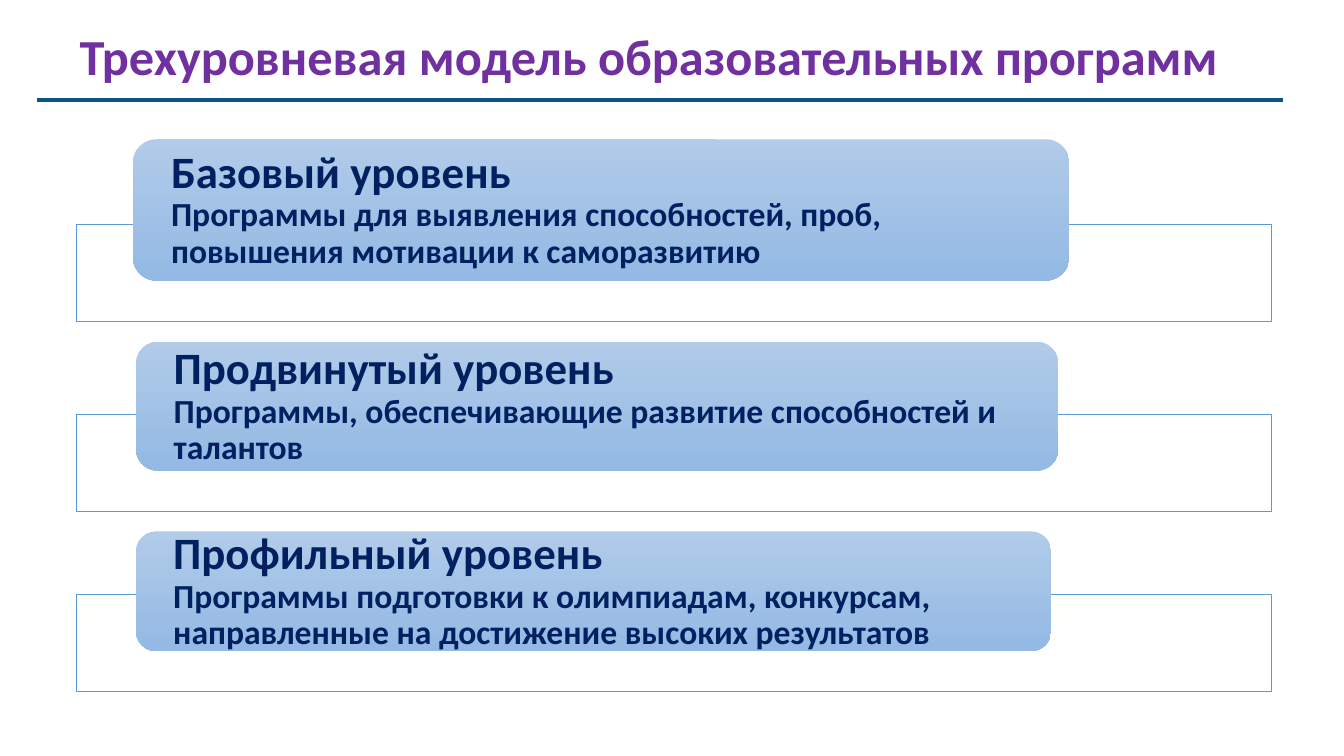
from dataclasses import dataclass

from lxml import etree
from pptx import Presentation
from pptx.dml.color import RGBColor
from pptx.enum.shapes import MSO_CONNECTOR, MSO_SHAPE
from pptx.enum.text import MSO_ANCHOR, PP_ALIGN
from pptx.oxml.ns import qn
from pptx.slide import Slide
from pptx.util import Cm, Pt

RECTANGLE, ROUNDED = MSO_SHAPE.RECTANGLE, MSO_SHAPE.ROUNDED_RECTANGLE
STRAIGHT = MSO_CONNECTOR.STRAIGHT
MIDDLE = MSO_ANCHOR.MIDDLE
LEFT, CENTER = PP_ALIGN.LEFT, PP_ALIGN.CENTER

FONT = "Calibri"
COLORS = {
    "heading": "7030A0",
    "rule": "095586",
    "frame_fill": "FFFFFF",
    "frame_line": "5B9BD5",
    "card_top": "B1CBE9",
    "card_bottom": "93B9E4",
    "card_text": "002060",
}

# Frames share one column; each ends a fixed drop below its card
FRAME_LEFT, FRAME_WIDTH, FRAME_HEIGHT = 1.93, 30.1, 2.44
FRAME_DROP = 1.02
CARD_INSET = 0.79


@dataclass
class Level:
    name: str
    description: str
    left: float
    top: float
    width: float
    height: float


LEVELS = [
    Level("Базовый уровень",
          "Программы для выявления способностей, проб, повышения мотивации к саморазвитию",
          3.35, 3.51, 23.6, 3.56),
    Level("Продвинутый уровень",
          "Программы, обеспечивающие развитие способностей и талантов",
          3.43, 8.61, 23.24, 3.25),
    Level("Профильный уровень",
          "Программы подготовки к олимпиадам, конкурсам, направленные на достижение высоких результатов",
          3.43, 13.39, 23.06, 3.02),
]


def color(name: str) -> RGBColor:
    return RGBColor.from_string(COLORS[name])


def write(paragraph, text: str, size: int, color_name: str) -> None:
    paragraph.text = text
    font = paragraph.runs[0].font
    font.name, font.size, font.bold = FONT, Pt(size), True
    font.color.rgb = color(color_name)


def add_heading(slide: Slide, text: str) -> None:
    heading = slide.shapes.add_textbox(Cm(0.94), Cm(0.51), Cm(30.84), Cm(1.8))
    heading.text_frame.word_wrap = True
    paragraph = heading.text_frame.paragraphs[0]
    write(paragraph, text, 36, "heading")
    paragraph.alignment = CENTER

    rule = slide.shapes.add_connector(STRAIGHT, Cm(0.94), Cm(2.52), Cm(32.33), Cm(2.52))
    rule.line.color.rgb = color("rule")
    rule.line.width = Pt(2.25)
    etree.SubElement(rule._element.spPr, qn("a:effectLst"))


def add_frame(slide: Slide, level: Level) -> None:
    top = level.top + level.height + FRAME_DROP - FRAME_HEIGHT
    frame = slide.shapes.add_shape(
        RECTANGLE, Cm(FRAME_LEFT), Cm(top), Cm(FRAME_WIDTH), Cm(FRAME_HEIGHT))
    frame.shadow.inherit = False
    frame.fill.solid()
    frame.fill.fore_color.rgb = color("frame_fill")
    frame.line.color.rgb = color("frame_line")
    frame.line.width = Pt(0.5)


def add_card(slide: Slide, level: Level) -> None:
    card = slide.shapes.add_shape(
        ROUNDED, Cm(level.left), Cm(level.top), Cm(level.width), Cm(level.height))
    card.shadow.inherit = False
    card.line.fill.background()
    card.fill.gradient()
    card.fill.gradient_angle = 270
    for stop, name in zip(card.fill.gradient_stops, ("card_top", "card_bottom")):
        stop.color.rgb = color(name)

    frame = card.text_frame
    frame.word_wrap = True
    frame.vertical_anchor = MIDDLE
    frame.margin_left = frame.margin_right = Cm(CARD_INSET)
    frame.margin_top = frame.margin_bottom = 0
    write(frame.paragraphs[0], level.name, 32, "card_text")
    write(frame.add_paragraph(), level.description, 24, "card_text")
    for paragraph in frame.paragraphs:
        paragraph.alignment = LEFT
        paragraph.line_spacing = 0.9


def main() -> None:
    presentation = Presentation()
    presentation.slide_width, presentation.slide_height = Cm(33.87), Cm(19.05)
    slide = presentation.slides.add_slide(presentation.slide_layouts[6])

    # Heading with its rule
    add_heading(slide, "Трехуровневая модель образовательных программ")

    # Programme levels
    for level in LEVELS:
        add_frame(slide, level)
        add_card(slide, level)

    presentation.save("out.pptx")


if __name__ == "__main__":
    main()
